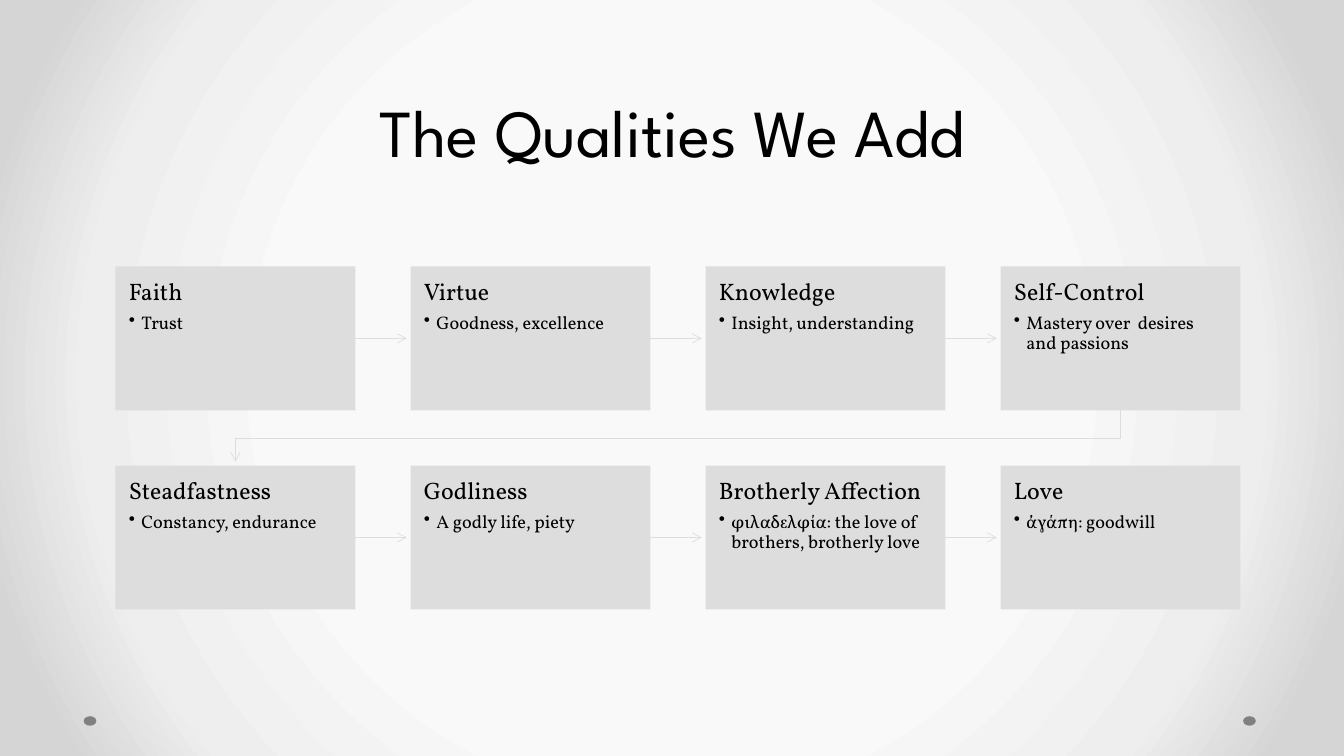
from pptx import Presentation
from pptx.dml.color import RGBColor
from pptx.enum.shapes import MSO_CONNECTOR, MSO_SHAPE
from pptx.enum.text import MSO_ANCHOR, MSO_AUTO_SIZE, PP_ALIGN
from pptx.oxml.ns import qn
from pptx.util import Pt
from lxml.etree import SubElement

WIDTH, HEIGHT = 960, 540
GREY, BLACK = "DDDDDD", "000000"
STOPS = ((50, "F9F9F9"), (76, "EEEEEE"), (92, "D5D5D5"))
QUALITIES = (
    ("Faith", "Trust"),
    ("Virtue", "Goodness, excellence"),
    ("Knowledge", "Insight, understanding"),
    ("Self-Control", "Mastery over  desires and passions"),
    ("Steadfastness", "Constancy, endurance"),
    ("Godliness", "A godly life, piety"),
    ("Brotherly Affection", "φιλαδελφία: the love of brothers, brotherly love"),
    ("Love", "ἀγάπη: goodwill"),
)
HEAD = {"size": Pt(17), "name": "Vollkorn"}
DETAIL = {"size": Pt(13), "name": "Vollkorn"}
TITLE = {"size": Pt(48), "name": "League Spartan"}
COLS, ROWS = 4, 2
CARD_W, CARD_H = 171.3, 102.8
ARROW_GAP = 2.7


def color(value):
    return RGBColor.from_string(value)


def set_attrs(obj, values):
    for key, value in values.items():
        setattr(obj, key, value)


def write(p, text, font, after=0, spacing=0.9, align=PP_ALIGN.LEFT):
    set_attrs(p, {"alignment": align, "line_spacing": spacing,
                  "space_before": Pt(0), "space_after": Pt(after)})
    r = p.add_run()
    r.text = text
    set_attrs(r.font, font)
    r.font.color.rgb = color(BLACK)


def add_bullet(p, indent):
    pPr = p._p.get_or_add_pPr()
    pPr.set("marL", str(Pt(indent)))
    pPr.set("indent", str(-Pt(indent)))
    SubElement(pPr, qn("a:buChar"), char="•")


def add_block(s, kind, x, y, w, h, fill):
    sp = s.shapes.add_shape(kind, Pt(x), Pt(y), Pt(w), Pt(h))
    sp.shadow.inherit = False
    sp.fill.solid()
    sp.fill.fore_color.rgb = color(fill)
    sp.line.fill.background()
    return sp


def style_arrow(sp):
    sp.line.color.rgb = color(GREY)
    sp.line.width = Pt(0.5)
    SubElement(sp.line._get_or_add_ln(), qn("a:tailEnd"), type="arrow")


def background(s):
    s.background.fill.gradient()
    grad = s.element.find(".//" + qn("a:gradFill"))
    for child in list(grad):
        grad.remove(child)
    stops = SubElement(grad, qn("a:gsLst"))
    for pos, value in STOPS:
        gs = SubElement(stops, qn("a:gs"), pos=str(pos * 1000))
        SubElement(gs, qn("a:srgbClr"), val=value)
    circle = SubElement(grad, qn("a:path"), {"path": "circle"})
    SubElement(circle, qn("a:fillToRect"), l="50000", t="50000", r="50000", b="50000")


def title(s, x, y, w, h):
    sp = s.shapes.title
    set_attrs(sp, {"left": Pt(x), "top": Pt(y), "width": Pt(w), "height": Pt(h)})
    tf = sp.text_frame
    set_attrs(tf, {"vertical_anchor": MSO_ANCHOR.BOTTOM, "word_wrap": True,
                   "auto_size": MSO_AUTO_SIZE.NONE})
    write(tf.paragraphs[0], "The Qualities We Add", TITLE,
          spacing=Pt(48), align=PP_ALIGN.CENTER)


def card(s, x, y, w, h, head, detail):
    sp = add_block(s, MSO_SHAPE.RECTANGLE, x, y, w, h, GREY)
    tf = sp.text_frame
    set_attrs(tf, {"word_wrap": True, "vertical_anchor": MSO_ANCHOR.TOP})
    for side in ("left", "top", "right", "bottom"):
        setattr(tf, f"margin_{side}", Pt(9.5))
    write(tf.paragraphs[0], head, HEAD, after=6)
    p = tf.add_paragraph()
    write(p, detail, DETAIL, after=2)
    add_bullet(p, 9)


def straight_arrow(s, x, y, length):
    sp = s.shapes.add_connector(MSO_CONNECTOR.STRAIGHT, Pt(x), Pt(y), Pt(x + length), Pt(y))
    style_arrow(sp)
    SubElement(sp._element.spPr, qn("a:effectLst"))


def return_arrow(s, x, y, w, h):
    bend = y + h / 2
    builder = s.shapes.build_freeform(Pt(x + w), Pt(y))
    corners = ((x + w, bend), (x, bend), (x, y + h - ARROW_GAP))
    builder.add_line_segments([(Pt(a), Pt(b)) for a, b in corners], close=False)
    sp = builder.convert_to_shape()
    sp.shadow.inherit = False
    sp.fill.background()
    style_arrow(sp)


def process(s, x, y, w, h):
    step_x = (w - CARD_W) / (COLS - 1)
    step_y = (h - CARD_H) / (ROWS - 1)
    for i, (head, detail) in enumerate(QUALITIES):
        row, col = divmod(i, COLS)
        left, top = x + col * step_x, y + row * step_y
        card(s, left, top, CARD_W, CARD_H, head, detail)
        if col < COLS - 1:
            straight_arrow(s, left + CARD_W, top + CARD_H / 2, step_x - CARD_W - ARROW_GAP)
        elif row < ROWS - 1:
            return_arrow(s, x + CARD_W / 2, top + CARD_H, w - CARD_W, step_y - CARD_H)


def corner_dots(s, x, y, w, h):
    for left in (x, x + w - 9):
        add_block(s, MSO_SHAPE.OVAL, left, y, 9, h, "808080")


def main():
    prs = Presentation()
    prs.slide_width, prs.slide_height = Pt(WIDTH), Pt(HEIGHT)
    s = prs.slides.add_slide(prs.slide_layouts[5])
    background(s)
    corner_dots(s, 59.8, 511.6, 837.2, 6.8)
    title(s, 0, 0, WIDTH, 126)
    process(s, 82.5, 190.3, 803.5, 245)
    prs.save("out.pptx")


if __name__ == "__main__":
    main()
